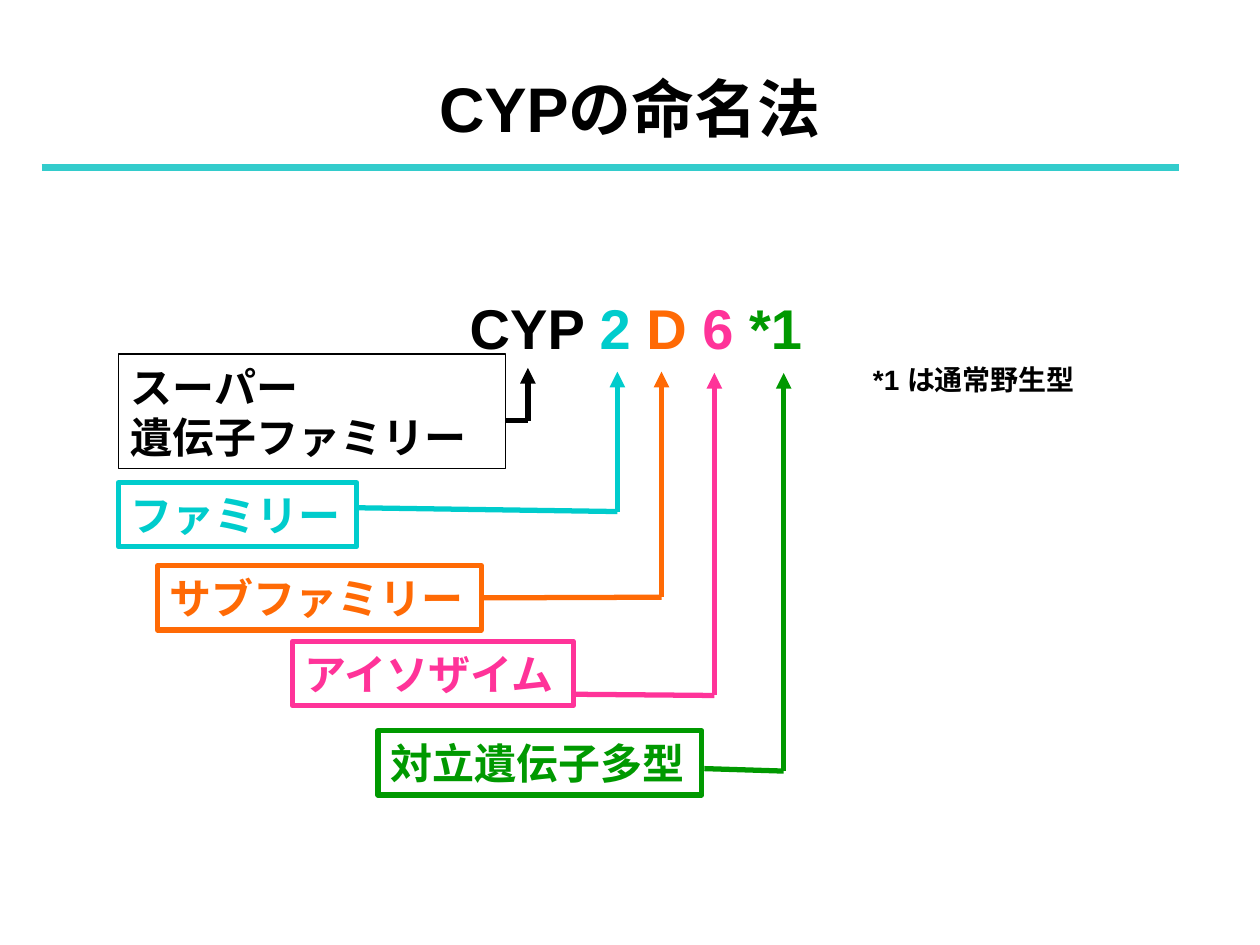
from dataclasses import dataclass

from lxml import etree
from pptx import Presentation
from pptx import util as u
from pptx.dml.color import RGBColor
from pptx.enum import shapes, text
from pptx.oxml.ns import qn

Point = tuple[float, float]
Run = tuple[str, str]


@dataclass(frozen=True)
class Theme:
    font: str = "Arial"
    black: str = "000000"
    cyan: str = "00CCCC"
    orange: str = "FF6A05"
    pink: str = "FF3399"
    green: str = "009900"
    rule: str = "33CCCC"
    title_size: int = 36
    name_size: int = 32
    label_size: int = 24
    note_size: int = 16
    arrow_width: float = 3
    rule_width: float = 4


THEME = Theme()


@dataclass(frozen=True)
class NamePart:
    symbol: str
    lines: tuple[str, ...]
    color: str
    box: tuple[float, float, float, float]
    start: Point
    corner: Point
    tip: float
    border: float = THEME.arrow_width
    joined: bool = False


PARTS = [
    NamePart("CYP ", ("スーパー", "遺伝子ファミリー"), THEME.black,
             (0.94, 2.81, 3.07, 0.91), (4.02, 3.34), (4.19, 3.34), 2.92, border=0.75),
    NamePart("2 ", ("ファミリー",), THEME.cyan,
             (0.94, 3.83, 1.89, 0.51), (2.84, 4.03), (4.9, 4.06), 2.95),
    NamePart("D ", ("サブファミリー",), THEME.orange,
             (1.25, 4.49, 2.57, 0.51), (3.82, 4.76), (5.25, 4.74), 2.95, joined=True),
    NamePart("6 ", ("アイソザイム",), THEME.pink,
             (2.32, 5.09, 2.23, 0.51), (4.54, 5.51), (5.67, 5.52), 2.96),
    NamePart("*1", ("対立遺伝子多型",), THEME.green,
             (3, 5.8, 2.57, 0.51), (5.59, 6.1), (6.22, 6.12), 2.96),
]


def write(shape, paragraphs: list[list[Run]], size: float, wrap: bool = True,
          align=text.PP_ALIGN.LEFT, anchor=text.MSO_ANCHOR.TOP) -> None:
    frame = shape.text_frame
    frame.word_wrap = wrap
    frame.vertical_anchor = anchor
    for index, runs in enumerate(paragraphs):
        paragraph = frame.add_paragraph() if index else frame.paragraphs[0]
        paragraph.alignment = align
        for words, color in runs:
            run = paragraph.add_run()
            run.text = words
            run.font.name = THEME.font
            run.font.size = u.Pt(size)
            run.font.bold = True
            run.font.color.rgb = RGBColor.from_string(color)


def add_text(slide, box: tuple[float, ...], runs: list[Run], size: float, **options) -> None:
    shape = slide.shapes.add_textbox(*map(u.Inches, box))
    write(shape, [runs], size, **options)


def add_line(slide, start: Point, end: Point, color: str, width: float, arrow: bool = False):
    connector = slide.shapes.add_connector(
        shapes.MSO_CONNECTOR.STRAIGHT, *map(u.Inches, (*start, *end)))
    connector.line.color.rgb = RGBColor.from_string(color)
    connector.line.width = u.Pt(width)
    if arrow:
        etree.SubElement(connector.line._get_or_add_ln(), qn("a:tailEnd"), type="triangle")
    etree.SubElement(connector._element.spPr, qn("a:effectLst"))
    return connector


def add_part(slide, part: NamePart) -> None:
    branch = add_line(slide, part.start, part.corner, part.color, THEME.arrow_width)
    add_line(slide, part.corner, (part.corner[0], part.tip), part.color,
             THEME.arrow_width, arrow=True)
    label = slide.shapes.add_shape(shapes.MSO_SHAPE.RECTANGLE, *map(u.Inches, part.box))
    label.shadow.inherit = False
    label.fill.background()
    label.line.color.rgb = RGBColor.from_string(part.color)
    label.line.width = u.Pt(part.border)
    write(label, [[(line, part.color)] for line in part.lines], THEME.label_size,
          wrap=len(part.lines) > 1, anchor=text.MSO_ANCHOR.MIDDLE)
    if part.joined:
        branch.begin_connect(label, 3)


def main() -> None:
    presentation = Presentation()
    presentation.slide_width = u.Inches(10)
    presentation.slide_height = u.Inches(7.5)
    slide = presentation.slides.add_slide(presentation.slide_layouts[6])

    add_text(slide, (3.63, 2.28, 2.86, 0.64),
             [(part.symbol, part.color) for part in PARTS], THEME.name_size, wrap=False)
    for part in PARTS:
        add_part(slide, part)
    add_line(slide, (0.33, 1.33), (9.36, 1.33), THEME.rule, THEME.rule_width)
    add_text(slide, (0.5, 0.5, 9, 1.05), [("CYPの命名法", THEME.black)],
             THEME.title_size, align=text.PP_ALIGN.CENTER)
    add_text(slide, (6.83, 2.83, 1.83, 0.37), [("*1 は通常野生型", THEME.black)],
             THEME.note_size)
    presentation.save("out.pptx")


if __name__ == "__main__":
    main()
